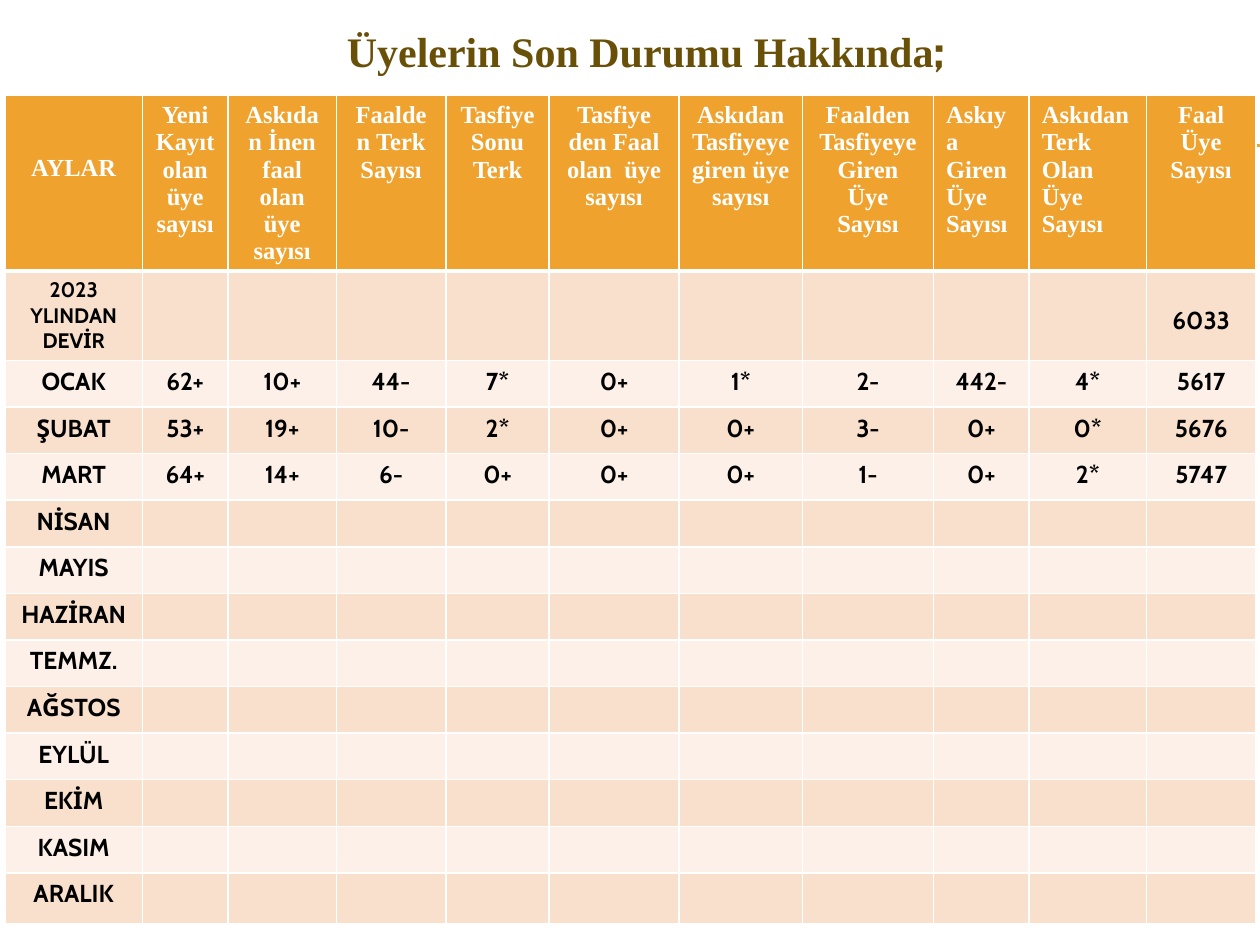
from lxml import etree
from pptx import Presentation
from pptx import util as u
from pptx.dml.color import RGBColor
from pptx.enum import shapes, text
from pptx.oxml.ns import qn

ORANGE = RGBColor(0xF0, 0xA2, 0x2E)
PEACH = RGBColor(0xF9, 0xE0, 0xCD)
CREAM = RGBColor(0xFC, 0xF0, 0xE8)
BROWN = RGBColor(0x69, 0x50, 0x08)
WHITE = RGBColor(0xFF, 0xFF, 0xFF)
BLACK = RGBColor(0, 0, 0)
SERIF, SANS = "Times New Roman", "Cabin"

TITLE = [("Üyelerin Son Durumu Hakkında", 24, SERIF), (";", 28, SANS)]
COLUMNS = [
    ("AYLAR", 1.09),
    ("Yeni Kayıt olan üye sayısı", 0.68),
    ("Askıdan İnen faal olan üye sayısı", 0.86),
    ("Faalden Terk Sayısı", 0.87),
    ("Tasfiye Sonu Terk", 0.82),
    ("Tasfiye den Faal olan  üye sayısı", 1.03),
    ("Askıdan Tasfiyeye giren üye sayısı", 0.98),
    ("Faalden Tasfiyeye Giren Üye Sayısı", 1.04),
    ("Askıya Giren Üye Sayısı", 0.76),
    ("Askıdan Terk Olan Üye Sayısı", 0.93),
    ("Faal Üye Sayısı", 0.87),
]
LEFT_HEADERS = (8, 9)
CARRIED = ["2023 YLINDAN DEVİR"] + [""] * 9 + ["6033"]
REPORTED = [
    ["OCAK", "62+", "10+", "44-", "7*", "0+", "1*", "2-", "442-", "4*", "5617"],
    ["ŞUBAT", "53+", "19+", "10-", "2*", "0+", "0+", "3-", "0+", "0*", "5676"],
    ["MART", "64+", "14+", "6-", "0+", "0+", "0+", "1-", "0+", "2*", "5747"],
]
PENDING = ["NİSAN", "MAYIS", "HAZİRAN", "TEMMZ.", "AĞSTOS", "EYLÜL", "EKİM",
           "KASIM", "ARALIK"]
ROWS = ([[name for name, _ in COLUMNS], CARRIED] + REPORTED
        + [[month] + [""] * (len(COLUMNS) - 1) for month in PENDING])
HEIGHTS = [1.25, 0.63] + [0.37] * (len(ROWS) - 3) + [0.4]
TOP_MARGINS = {(0, 0): 0.47, (1, 10): 0.28}


def style_run(span, size, font, color):
    span.font.size, span.font.name, span.font.bold = u.Pt(size), font, True
    span.font.color.rgb = color


def set_borders(cell, row):
    widths = {"L": 1, "R": 1, "T": 3 if row == 1 else 1, "B": 3 if row == 0 else 1}
    properties = cell._tc.get_or_add_tcPr()
    for index, (side, width) in enumerate(widths.items()):
        line = etree.Element(qn(f"a:ln{side}"), w=str(u.Pt(width)))
        fill = etree.SubElement(line, qn("a:solidFill"))
        etree.SubElement(fill, qn("a:srgbClr"), val=str(WHITE))
        properties.insert(index, line)


def fill_cell(cell, row, column, words):
    header = row == 0
    cell.fill.solid()
    cell.fill.fore_color.rgb = ORANGE if header else PEACH if row % 2 else CREAM
    set_borders(cell, row)
    cell.margin_top = u.Inches(TOP_MARGINS.get((row, column), 0.05))
    para = cell.text_frame.paragraphs[0]
    if not words:
        etree.SubElement(para._p, qn("a:endParaRPr"), sz="1400")
        return
    para.text = words
    left = header and column in LEFT_HEADERS
    para.alignment = text.PP_ALIGN.LEFT if left else text.PP_ALIGN.CENTER
    size = 12 if (row, column) == (1, 0) else 14
    style_run(para.runs[0], size, SERIF if header else SANS, WHITE if header else BLACK)


def add_title(page):
    box = page.shapes.title
    box.left, box.top, box.width, box.height = map(u.Inches, (0.62, 0, 9.02, 0.76))
    frame = box.text_frame
    frame.auto_size = text.MSO_AUTO_SIZE.NONE
    frame.vertical_anchor = text.MSO_ANCHOR.MIDDLE
    para = frame.paragraphs[0]
    para.alignment = text.PP_ALIGN.CENTER
    for words, size, font in TITLE:
        span = para.add_run()
        span.text = words
        style_run(span, size, font, BROWN)


def add_rule(page, y):
    rule = page.shapes.add_connector(
        shapes.MSO_CONNECTOR.STRAIGHT, *map(u.Inches, (0.56, y, 10, y)))
    rule.line.color.rgb = ORANGE
    rule.line.width = u.Pt(0.75)
    etree.SubElement(rule._element.spPr, qn("a:effectLst"))


def add_member_table(page):
    table = page.shapes.add_table(
        len(ROWS), len(COLUMNS),
        *map(u.Inches, (0.04, 0.76, 9.92, sum(HEIGHTS)))).table
    for column, (_, width) in zip(table.columns, COLUMNS):
        column.width = u.Inches(width)
    for row, height in zip(table.rows, HEIGHTS):
        row.height = u.Inches(height)
    for r, values in enumerate(ROWS):
        for c, words in enumerate(values):
            fill_cell(table.cell(r, c), r, c, words)


def main():
    deck = Presentation()
    deck.slide_width, deck.slide_height = u.Inches(10), u.Inches(7.5)
    page = deck.slides.add_slide(deck.slide_layouts.get_by_name("Title Only"))
    for y in (1.15, 1.16):
        add_rule(page, y)
    add_member_table(page)
    add_title(page)
    deck.save("out.pptx")


if __name__ == "__main__":
    main()
